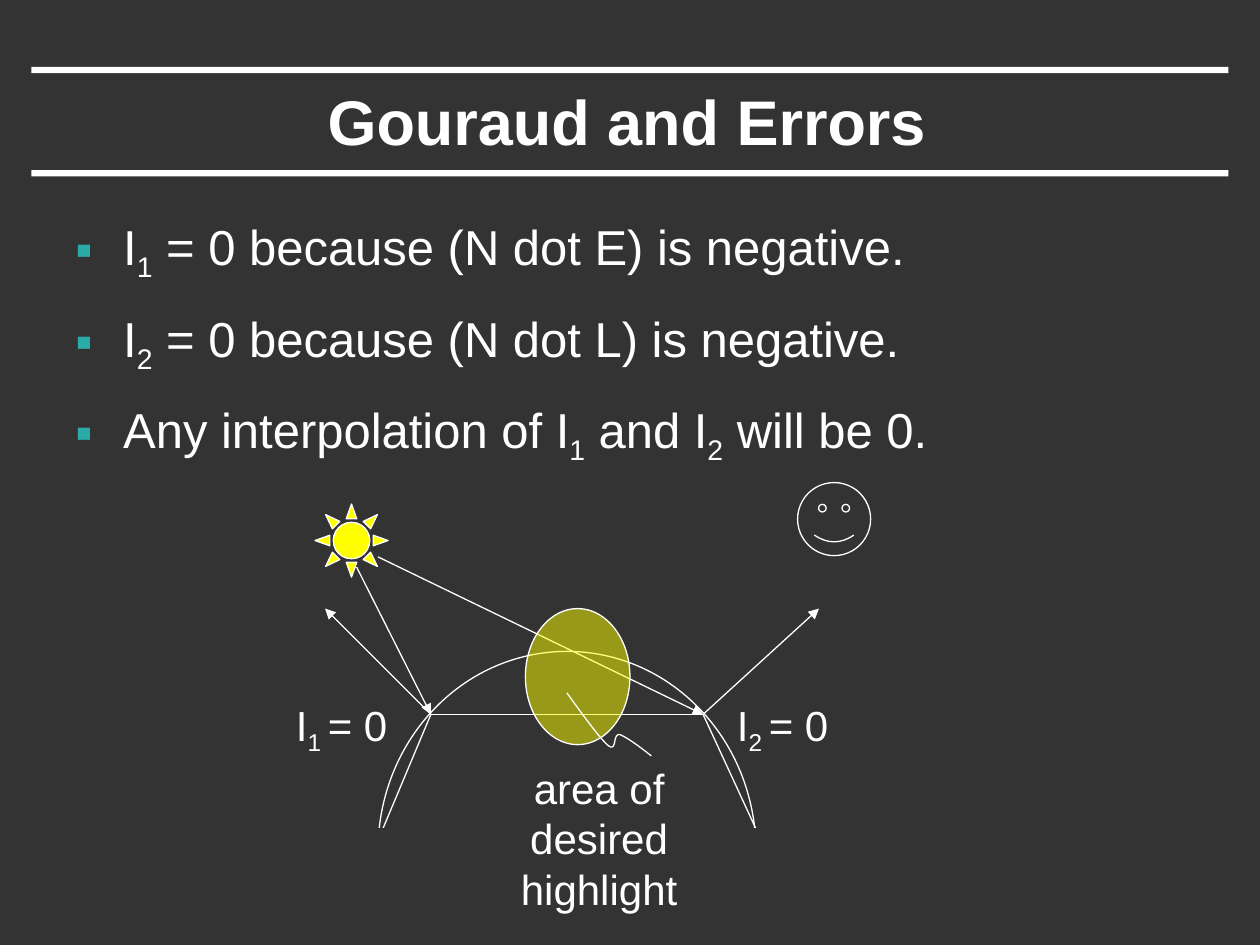
from lxml import etree
from pptx import Presentation
from pptx.dml.color import RGBColor
from pptx.enum.shapes import MSO_CONNECTOR, MSO_SHAPE
from pptx.enum.text import MSO_ANCHOR, MSO_AUTO_SIZE, PP_ALIGN
from pptx.oxml.ns import qn
from pptx.util import Inches, Pt

WHITE = RGBColor(0xFF, 0xFF, 0xFF)
CHARCOAL = RGBColor(0x33, 0x33, 0x33)
TEAL = RGBColor(0x2A, 0xAB, 0xA8)
YELLOW = RGBColor(0xFF, 0xFF, 0x00)
STRAIGHT = MSO_CONNECTOR.STRAIGHT
RECTANGLE, OVAL = MSO_SHAPE.RECTANGLE, MSO_SHAPE.OVAL
SUN, SMILEY = MSO_SHAPE.SUN, MSO_SHAPE.SMILEY_FACE
CENTER, LEFT = PP_ALIGN.CENTER, PP_ALIGN.LEFT
MIDDLE = MSO_ANCHOR.MIDDLE
FIT_SHAPE = MSO_AUTO_SIZE.SHAPE_TO_FIT_TEXT


def add_node(parent, tag, **attributes):
    return etree.SubElement(parent, qn(tag), attributes)


def paint(shape, fill=None, line=None):
    shape.shadow.inherit = False
    if fill is None:
        shape.fill.background()
    else:
        shape.fill.solid()
        shape.fill.fore_color.rgb = fill
    if line is None:
        shape.line.fill.background()
    else:
        shape.line.color.rgb = line
        shape.line.width = Pt(0.75)


def add_figure(shapes, kind, left, top, width, height, fill=None, line=WHITE):
    shape = shapes.add_shape(kind, Inches(left), Inches(top), Inches(width), Inches(height))
    paint(shape, fill, line)
    return shape


def add_line(shapes, start, end, arrow=False):
    line = shapes.add_connector(STRAIGHT, *(Inches(value) for value in (*start, *end)))
    line.line.color.rgb = WHITE
    line.line.width = Pt(0.75)
    if arrow:
        add_node(line.line._get_or_add_ln(), "a:tailEnd", type="triangle")
    add_node(line._element.spPr, "a:effectLst")


def add_text_frame(shapes, left, top, width, height, wrap=True):
    box = shapes.add_textbox(Inches(left), Inches(top), Inches(width), Inches(height))
    box.text_frame.word_wrap = wrap
    return box.text_frame


def write(paragraph, pieces, size, alignment=LEFT, bold=False):
    paragraph.alignment = alignment
    font = paragraph.font
    font.name, font.size, font.bold = "Arial", Pt(size), bold
    font.color.rgb = WHITE
    for index, piece in enumerate(pieces):
        run = paragraph.add_run()
        run.text = piece
        if index % 2:
            run._r.get_or_add_rPr().set("baseline", "-25000")


def add_bullet(paragraph):
    properties = paragraph._p.get_or_add_pPr()
    indent = Inches(0.38)
    properties.set("marL", str(indent))
    properties.set("indent", str(-indent))
    defaults = properties.find(qn("a:defRPr"))
    spacing = add_node(properties, "a:spcBef")
    add_node(spacing, "a:spcPct", val="50000")
    color = add_node(properties, "a:buClr")
    add_node(color, "a:srgbClr", val=str(TEAL))
    add_node(properties, "a:buFont", typeface="Arial")
    add_node(properties, "a:buChar", char="▪")
    properties.append(defaults)


def add_title(slide, left, top, width, height):
    for rule_top in (top + height - 0.05, top):
        add_figure(slide.shapes, RECTANGLE, left, rule_top, width, 0.05, WHITE, None)
    frame = add_text_frame(slide.shapes, left + 0.49, top + 0.05, 8.47, 0.75)
    frame.vertical_anchor = MIDDLE
    write(frame.paragraphs[0], ["Gouraud and Errors"], 36, CENTER, True)


def add_statements(slide, left, top, width, height):
    statements = (
        ["I", "1", " = 0 because (N dot E) is negative."],
        ["I", "2", " = 0 because (N dot L) is negative."],
        ["Any interpolation of I", "1", " and I", "2", " will be 0."],
    )
    frame = add_text_frame(slide.shapes, left, top, width, height)
    for index, pieces in enumerate(statements):
        paragraph = frame.add_paragraph() if index else frame.paragraphs[0]
        write(paragraph, pieces, 28)
        add_bullet(paragraph)


def curve_points(start, segments, steps=10):
    points = [start]
    for first, second, end in segments:
        for step in range(1, steps + 1):
            t = step / steps
            u = 1 - t
            points.append(tuple(
                u**3 * a + 3 * u**2 * t * b + 3 * u * t**2 * c + t**3 * d
                for a, b, c, d in zip(start, first, second, end)))
        start = end
    return points


def add_pointer(shapes, left, top):
    segments = (
        ((0.13, 0.18), (0.26, 0.36), (0.33, 0.42)),
        ((0.40, 0.47), (0.36, 0.32), (0.42, 0.33)),
        ((0.47, 0.35), (0.57, 0.42), (0.67, 0.50)),
    )
    points = [(Inches(left + x), Inches(top + y)) for x, y in curve_points((0, 0), segments)]
    builder = shapes.build_freeform(*points[0])
    builder.add_line_segments(points[1:], close=False)
    paint(builder.convert_to_shape(), line=WHITE)


def add_diagram(slide, left, top):
    shapes = slide.shapes.add_group_shape().shapes

    def at(x, y):
        return left + x, top + y

    left_vertex, right_vertex = at(1.42, 2.17), at(3.58, 2.17)
    add_figure(shapes, OVAL, *at(1, 1.67), 3, 3.17)
    add_line(shapes, left_vertex, right_vertex)
    add_line(shapes, left_vertex, at(1, 3.17))
    add_line(shapes, right_vertex, at(4, 3.08))
    add_figure(shapes, RECTANGLE, *at(0.58, 3.08), 4.08, 1.92, CHARCOAL, CHARCOAL)
    add_line(shapes, right_vertex, at(4.5, 1.33), True)
    add_line(shapes, left_vertex, at(0.58, 1.33), True)
    add_figure(shapes, SUN, *at(0.5, 0.5), 0.58, 0.58, YELLOW)
    add_figure(shapes, SMILEY, *at(4.33, 0.33), 0.58, 0.58)
    add_line(shapes, at(1, 0.92), right_vertex, True)
    add_line(shapes, at(0.83, 1), left_vertex, True)
    highlight = add_figure(shapes, OVAL, *at(2.17, 1.33), 0.83, 1.08, YELLOW)
    color = highlight._element.spPr.find(qn("a:solidFill")).find(qn("a:srgbClr"))
    add_node(color, "a:alpha", val="50000")

    for number, x in (("1 ", 0.25), ("2 ", 3.75)):
        frame = add_text_frame(shapes, *at(x, 2), 0.96, 0.51, wrap=False)
        frame.auto_size = FIT_SHAPE
        write(frame.paragraphs[0], ["I", number, "= 0"], 24)
    caption = add_text_frame(shapes, *at(1.67, 2.5), 2.17, 1.31)
    caption.auto_size = FIT_SHAPE
    write(caption.paragraphs[0], ["area of desired highlight"], 24, CENTER)
    add_pointer(shapes, *at(2.5, 2))


def main():
    presentation = Presentation()
    presentation.slide_width, presentation.slide_height = Inches(10), Inches(7.5)
    slide = presentation.slides.add_slide(presentation.slide_layouts[6])
    slide.background.fill.solid()
    slide.background.fill.fore_color.rgb = CHARCOAL
    add_title(slide, 0.25, 0.53, 9.5, 0.87)
    add_statements(slide, 0.5, 1.67, 9, 5.5)
    add_diagram(slide, 2, 3.5)
    presentation.save("out.pptx")


if __name__ == "__main__":
    main()
